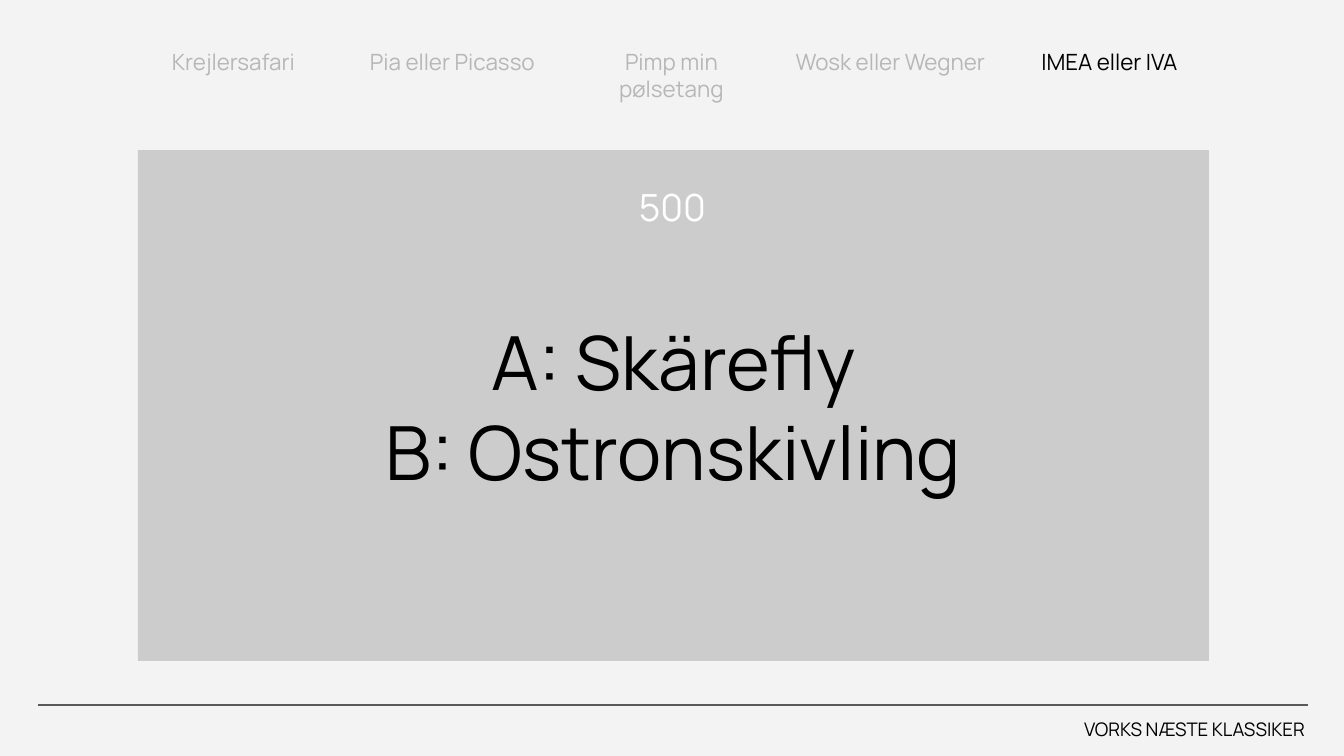
from dataclasses import dataclass

from pptx import Presentation
from pptx import util as u
from pptx.dml.color import RGBColor
from pptx.enum import shapes, text
from pptx.oxml.ns import qn
from lxml import etree

EMU_PER_PX = 914400 / 134.4


@dataclass(frozen=True)
class Theme:
    font: str = "Manrope"
    page: str = "F3F3F3"
    panel: str = "CCCCCC"
    rule: str = "595959"
    ink: str = "000000"
    muted: str = "B7B7B7"
    light: str = "FFFFFF"
    answer_size: int = 40
    points_size: int = 20
    category_size: int = 12
    footer_size: int = 10


@dataclass(frozen=True)
class Box:
    left: int
    top: int
    width: int
    height: int


@dataclass(frozen=True)
class Label:
    wording: str
    box: Box
    size: int
    color: str
    align: text.PP_ALIGN = text.PP_ALIGN.CENTER


THEME = Theme()


def px(length: int) -> u.Emu:
    return u.Emu(round(length * EMU_PER_PX))


def rgb(color: str) -> RGBColor:
    return RGBColor.from_string(color)


def write(frame, label: Label, anchor=text.MSO_ANCHOR.TOP) -> None:
    """Fill a text frame with a label and format every run."""
    frame.text = label.wording
    frame.word_wrap = True
    frame.auto_size = text.MSO_AUTO_SIZE.NONE
    frame.vertical_anchor = anchor
    frame.margin_left = frame.margin_right = u.Inches(0.1)
    frame.margin_top = frame.margin_bottom = u.Inches(0.1)
    for paragraph in frame.paragraphs:
        paragraph.alignment = label.align
        for run in paragraph.runs:
            run.font.name = THEME.font
            run.font.size = u.Pt(label.size)
            run.font.color.rgb = rgb(label.color)


def add_label(slide, label: Label) -> None:
    box = label.box
    textbox = slide.shapes.add_textbox(
        px(box.left), px(box.top), px(box.width), px(box.height))
    write(textbox.text_frame, label)


def fill_answer_panel(slide, label: Label) -> None:
    """Turn the title placeholder into the filled answer panel."""
    panel, box = slide.shapes.title, label.box
    panel.left, panel.top = px(box.left), px(box.top)
    panel.width, panel.height = px(box.width), px(box.height)
    panel.fill.solid()
    panel.fill.fore_color.rgb = rgb(THEME.panel)
    write(panel.text_frame, label, text.MSO_ANCHOR.MIDDLE)


def add_rule(slide, left: int, right: int, y: int) -> None:
    rule = slide.shapes.add_connector(
        shapes.MSO_CONNECTOR.STRAIGHT, px(left), px(y), px(right), px(y))
    rule.line.color.rgb = rgb(THEME.rule)
    rule.line.width = u.Pt(0.75)
    etree.SubElement(rule._element.spPr, qn("a:effectLst"))


def main() -> None:
    deck = Presentation()
    deck.slide_width, deck.slide_height = px(1344), px(756)
    slide = deck.slides.add_slide(deck.slide_layouts[5])
    slide.background.fill.solid()
    slide.background.fill.fore_color.rgb = rgb(THEME.page)

    # Footer
    add_label(slide, Label("VORKS NÆSTE KLASSIKER", Box(394, 704, 924, 50),
                           THEME.footer_size, THEME.ink, text.PP_ALIGN.RIGHT))
    add_rule(slide, 38, 1308, 705)

    # Answer panel with its points
    fill_answer_panel(slide, Label("A: Skärefly\nB: Ostronskivling",
                                   Box(138, 150, 1071, 511),
                                   THEME.answer_size, THEME.ink))
    add_label(slide, Label("500", Box(563, 171, 219, 73),
                           THEME.points_size, THEME.light))

    # Category row, with the current category in ink
    categories = ["Krejlersafari", "Pia eller Picasso", "Pimp min pølsetang",
                  "Wosk eller Wegner", "IMEA eller IVA"]
    current = categories[-1]
    column = 219
    for index, category in enumerate(categories):
        color = THEME.ink if category == current else THEME.muted
        box = Box(124 + index * column, 35, column, 82)
        add_label(slide, Label(category, box, THEME.category_size, color))

    deck.save("out.pptx")


if __name__ == "__main__":
    main()
